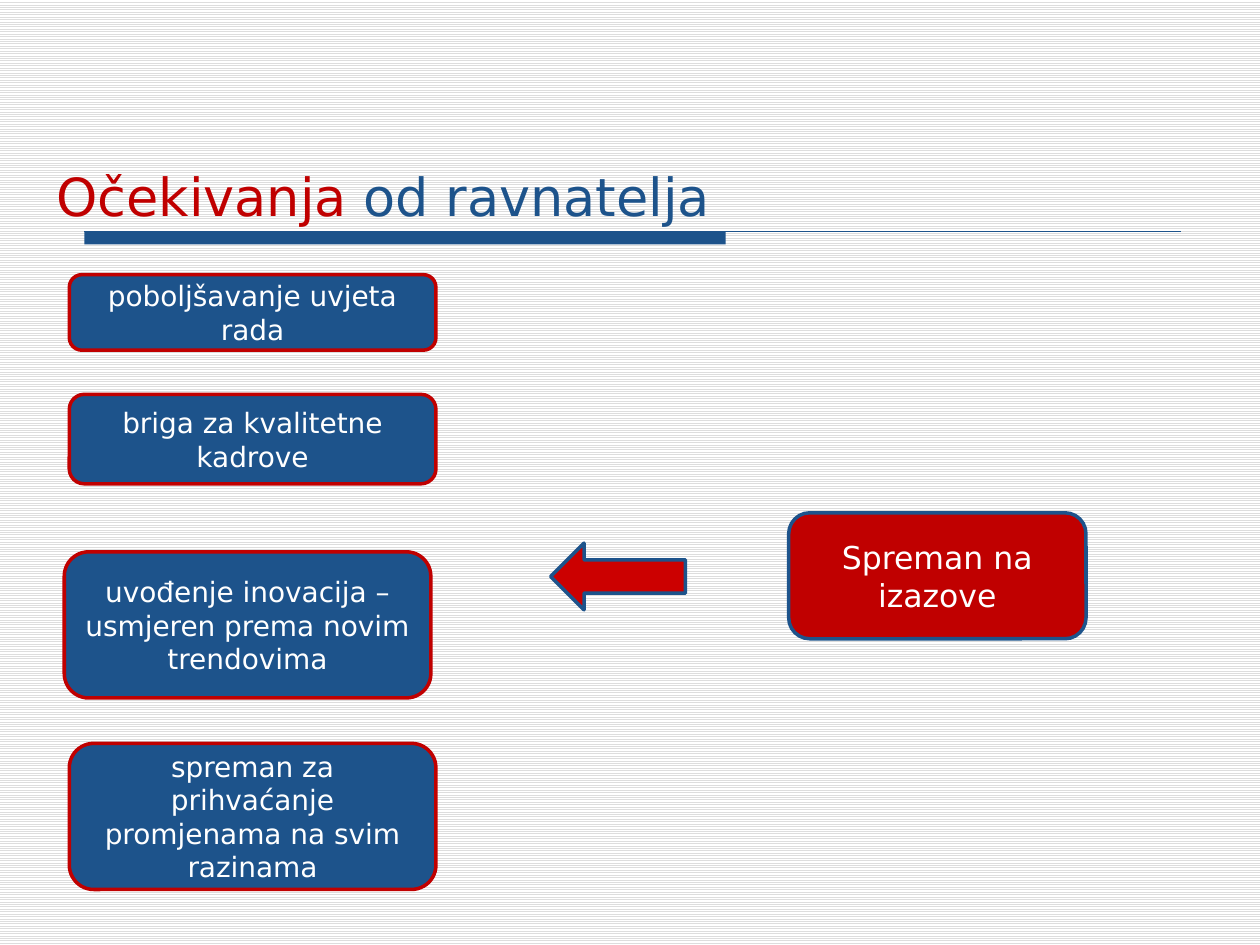
from lxml.etree import SubElement
from pptx import Presentation
from pptx.dml.color import RGBColor
from pptx.enum.dml import MSO_PATTERN
from pptx.enum.shapes import MSO_CONNECTOR, MSO_SHAPE
from pptx.enum.text import MSO_ANCHOR, PP_ALIGN
from pptx.oxml.ns import qn
from pptx.util import Inches, Pt

BLUE = RGBColor(0x1D, 0x53, 0x8B)
DARK_RED = RGBColor(0xC0, 0x00, 0x00)
ARROW_RED = RGBColor(0xCC, 0x00, 0x00)
WHITE = RGBColor(0xFF, 0xFF, 0xFF)
STRIPE = RGBColor(0xDD, 0xDD, 0xDD)
FONT = "DejaVu Sans"

WIDTH, HEIGHT = Inches(10), Inches(7.5)
COLUMNS, ROWS = 100, 75
CARD_LEFT, CARD_WIDTH = 5.5, 29.1
RULE_LEFT, RULE_TOP = 6.7, 18.4

# text, left column, top row, height in rows
EXPECTATIONS = [
    ("poboljšavanje uvjeta rada", CARD_LEFT, 21.8, 6),
    ("briga za kvalitetne kadrove", CARD_LEFT, 31.3, 7.1),
    ("uvođenje inovacija – usmjeren prema novim trendovima", 5.1, 43.8, 11.6),
    ("spreman za prihvaćanje promjenama na svim razinama", CARD_LEFT, 59, 11.6),
]


def grid(left, top, width, height):
    """Turn columns and rows of the grid into slide lengths."""
    column, row = WIDTH / COLUMNS, HEIGHT / ROWS
    return (round(left * column), round(top * row),
            round(width * column), round(height * row))


def paint_background(page):
    fill = page.background.fill
    fill.patterned()
    fill.pattern = MSO_PATTERN.LIGHT_HORIZONTAL
    fill.fore_color.rgb = STRIPE
    fill.back_color.rgb = WHITE


def add_block(page, kind, place, color, outline=None):
    block = page.shapes.add_shape(kind, *grid(*place))
    block.shadow.inherit = False
    block.fill.solid()
    block.fill.fore_color.rgb = color
    if outline is None:
        block.line.fill.background()
    else:
        block.line.color.rgb = outline
        block.line.width = Pt(2)
    return block


def add_card(page, text, place, color, outline, size):
    card = add_block(page, MSO_SHAPE.ROUNDED_RECTANGLE, place, color, outline)
    frame = card.text_frame
    frame.word_wrap = True
    frame.vertical_anchor = MSO_ANCHOR.MIDDLE
    para = frame.paragraphs[0]
    para.text = text
    para.alignment = PP_ALIGN.CENTER
    para.font.name, para.font.size = FONT, Pt(size)
    para.font.color.rgb = WHITE


def add_title(page):
    box = page.shapes.add_textbox(*grid(3.5, 13.1, 93.7, 5.4))
    frame = box.text_frame
    frame.word_wrap = True
    frame.vertical_anchor = MSO_ANCHOR.BOTTOM
    para = frame.paragraphs[0]
    for text, color in (("Očekivanja ", DARK_RED), ("od ravnatelja", BLUE)):
        span = para.add_run()
        span.text = text
        span.font.color.rgb = color
    para.font.name, para.font.size = FONT, Pt(30)


def add_title_rule(page):
    """Draw the thick bar and the thin line that runs on from it."""
    add_block(page, MSO_SHAPE.RECTANGLE, (RULE_LEFT, RULE_TOP, 50.9, 1), BLUE)
    left, top, width, _ = grid(RULE_LEFT, RULE_TOP, 87, 0)
    line = page.shapes.add_connector(
        MSO_CONNECTOR.STRAIGHT, left, top, left + width, top)
    line.line.color.rgb = BLUE
    line.line.width = Pt(0.75)
    SubElement(line._element.spPr, qn("a:effectLst"))


def main():
    deck = Presentation()
    deck.slide_width, deck.slide_height = WIDTH, HEIGHT
    page = deck.slides.add_slide(deck.slide_layouts[6])
    paint_background(page)
    add_title_rule(page)
    add_title(page)
    for text, left, top, height in EXPECTATIONS:
        add_card(page, text, (left, top, CARD_WIDTH, height), BLUE, DARK_RED, 16)
    arrow = add_block(page, MSO_SHAPE.RIGHT_ARROW, (43.7, 43.1, 10.7, 5.3),
                      ARROW_RED, BLUE)
    arrow.rotation = 180
    add_card(page, "Spreman na izazove", (62.6, 40.7, 23.6, 10),
             DARK_RED, BLUE, 18)
    deck.save("out.pptx")


if __name__ == "__main__":
    main()
